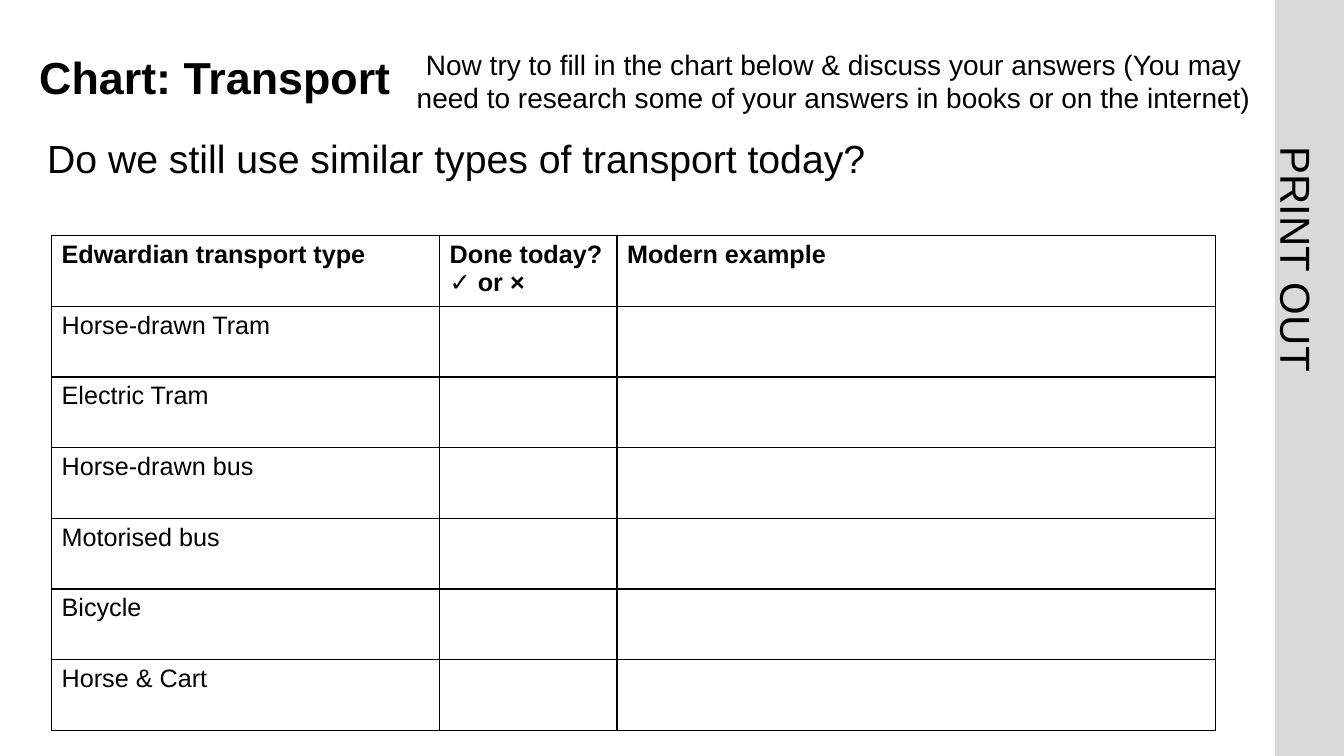
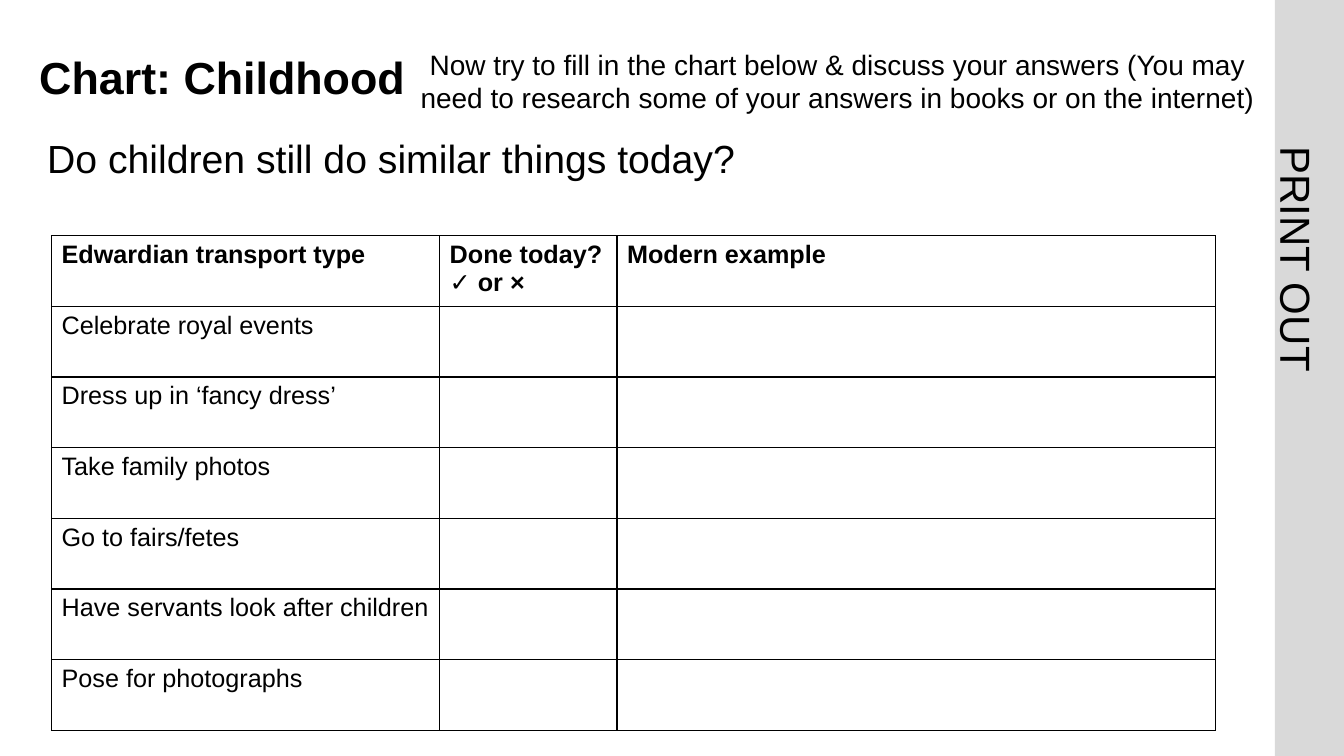
from dataclasses import dataclass
from lxml import etree
from pptx import Presentation
from pptx.dml.color import RGBColor
from pptx.enum import shapes, text
from pptx.oxml import ns
from pptx.util import Cm, Pt


@dataclass(frozen=True)
class Theme:
    font: str = "Arial"
    ink: str = "000000"
    strip: str = "D9D9D9"
    title: int = 32
    label: int = 30
    question: int = 28
    instruction: int = 20
    cell: int = 18
    label_leading: float = 58.8
    border: float = 1


@dataclass(frozen=True)
class Box:
    left: float
    top: float
    width: float
    height: float

    def lengths(self):
        return Cm(self.left), Cm(self.top), Cm(self.width), Cm(self.height)


THEME = Theme()
PAGE = Box(0, 0, 33.87, 19.05)
STRIP = Box(32.13, 0, 1.74, PAGE.height)
HEADER = Box(0.99, 1.02, 30.56, 1.98)
TABLE = Box(1.3, 5.94, 29.34, 12.46)
QUESTION_TOP = 3.25
QUESTION_HEIGHT = 1.45
COLUMN_WIDTHS = (9.78, 4.47, 15.09)
HEADINGS = ("Edwardian transport type", "Done today?\n✓ or ×", "Modern example")
INSTRUCTION = (
    "Now try to fill in the chart below & discuss your answers (You may "
    "need to research some of your answers in books or on the internet)"
)

WORKSHEETS = (
    {
        "title": "Chart: Transport",
        "question": "Do we still use similar types of transport today?",
        "question_width": 23.62,
        "instruction_left": 10.08,
        "instruction_width": 21.87,
        "topics": (
            "Horse-drawn Tram", "Electric Tram", "Horse-drawn bus",
            "Motorised bus", "Bicycle", "Horse & Cart",
        ),
    },
    {
        "title": "Chart: Childhood",
        "question": "Do children still do similar things today?",
        "question_width": 18.24,
        "instruction_left": 10.29,
        "instruction_width": 21.64,
        "topics": (
            "Celebrate royal events", "Dress up in ‘fancy dress’",
            "Take family photos", "Go to fairs/fetes",
            "Have servants look after children", "Pose for photographs",
        ),
    },
)


def write_text(frame, content, size, bold=False, align=text.PP_ALIGN.LEFT, spacing=None):
    for index, line in enumerate(content.split("\n")):
        paragraph = frame.add_paragraph() if index else frame.paragraphs[0]
        paragraph.alignment = align
        if spacing is not None:
            paragraph.line_spacing = spacing
        run = paragraph.add_run()
        run.text = line
        run.font.name = THEME.font
        run.font.size = Pt(size)
        run.font.bold = bold
        run.font.color.rgb = RGBColor.from_string(THEME.ink)


def add_text(slide, box, content, size, anchor=text.MSO_ANCHOR.TOP,
             insets=(0.25, 0.13, 0.25, 0.13), grow=False, rotation=0, **text_format):
    shape = slide.shapes.add_textbox(*box.lengths())
    shape.rotation = rotation
    frame = shape.text_frame
    frame.word_wrap = True
    frame.vertical_anchor = anchor
    if grow:
        frame.auto_size = text.MSO_AUTO_SIZE.SHAPE_TO_FIT_TEXT
    (frame.margin_left, frame.margin_top,
     frame.margin_right, frame.margin_bottom) = map(Cm, insets)
    write_text(frame, content, size, **text_format)


def add_print_strip(slide, box):
    strip = slide.shapes.add_shape(shapes.MSO_SHAPE.RECTANGLE, *box.lengths())
    strip.shadow.inherit = False
    strip.fill.solid()
    strip.fill.fore_color.rgb = RGBColor.from_string(THEME.strip)
    strip.line.fill.background()
    label = Box(box.left - 4.01, box.top + 5.61, 10.19, 1.83)
    add_text(slide, label, "PRINT OUT", THEME.label, insets=(0, 0, 0, 0), grow=True,
             rotation=90, align=text.PP_ALIGN.CENTER, spacing=Pt(THEME.label_leading))


def add_header(slide, box, worksheet):
    add_text(slide, box, worksheet["title"], THEME.title, bold=True, spacing=0.9,
             anchor=text.MSO_ANCHOR.MIDDLE, insets=(0, 0.13, 0.25, 0.13))
    instruction = Box(worksheet["instruction_left"], box.top + 0.22,
                      worksheet["instruction_width"], 1.6)
    add_text(slide, instruction, INSTRUCTION, THEME.instruction,
             anchor=text.MSO_ANCHOR.MIDDLE, align=text.PP_ALIGN.CENTER)
    question = Box(box.left - 0.05, QUESTION_TOP,
                   worksheet["question_width"], QUESTION_HEIGHT)
    add_text(slide, question, worksheet["question"], THEME.question, grow=True)


def add_borders(cell):
    properties = cell._tc.get_or_add_tcPr()
    for side in ("a:lnL", "a:lnR", "a:lnT", "a:lnB"):
        line = etree.SubElement(properties, ns.qn(side), w=str(Pt(THEME.border)))
        fill = etree.SubElement(line, ns.qn("a:solidFill"))
        etree.SubElement(fill, ns.qn("a:srgbClr"), val=THEME.ink)


def add_answer_table(slide, box, topics):
    rows = [HEADINGS] + [(topic, "", "") for topic in topics]
    table = slide.shapes.add_table(len(rows), len(HEADINGS), *box.lengths()).table
    table.first_row = False
    table.horz_banding = False
    for column, width in zip(table.columns, COLUMN_WIDTHS):
        column.width = Cm(width)
    for row_index, contents in enumerate(rows):
        table.rows[row_index].height = Cm(box.height / len(rows))
        for column_index, content in enumerate(contents):
            cell = table.cell(row_index, column_index)
            add_borders(cell)
            cell.fill.background()
            if content:
                write_text(cell.text_frame, content, THEME.cell, bold=row_index == 0)


def add_worksheet(presentation, worksheet):
    slide = presentation.slides.add_slide(presentation.slide_layouts[6])
    add_print_strip(slide, STRIP)
    add_header(slide, HEADER, worksheet)
    add_answer_table(slide, TABLE, worksheet["topics"])


def main():
    presentation = Presentation()
    presentation.slide_width = Cm(PAGE.width)
    presentation.slide_height = Cm(PAGE.height)
    for worksheet in WORKSHEETS:
        add_worksheet(presentation, worksheet)
    presentation.save("out.pptx")


if __name__ == "__main__":
    main()
